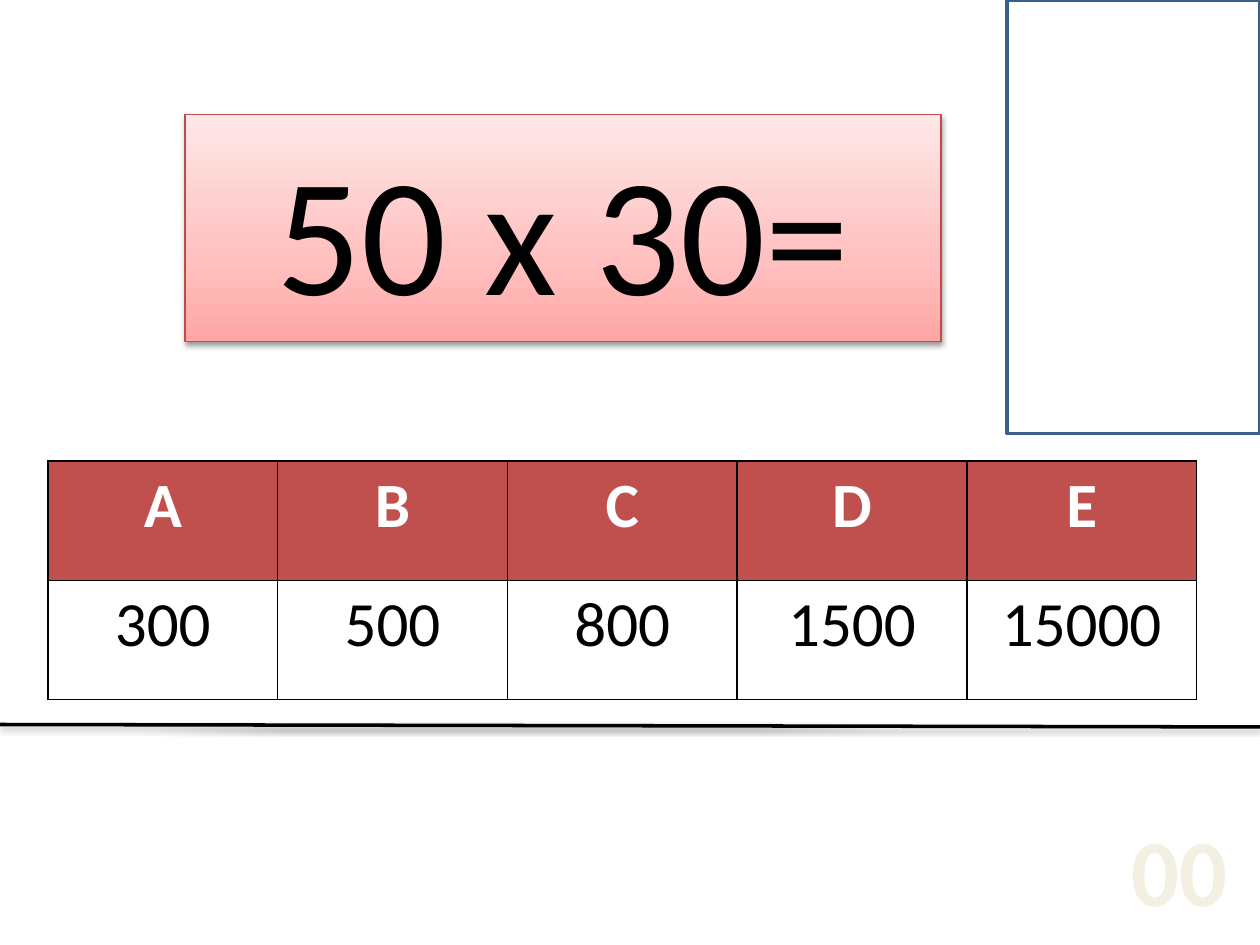
import pptx
import pptx.dml.color
import pptx.enum.shapes
import pptx.enum.text
import pptx.oxml
import pptx.oxml.ns
import pptx.util

Pt = pptx.util.Pt
FONT = "Calibri"
QUESTION = "50 x 30="
ANSWERS = [("A", "300"), ("B", "500"), ("C", "800"), ("D", "1500"), ("E", "15000")]
COUNTER = "00"
QUESTION_GRADIENT = [(0, "FFA6A5"), (35, "FFC0BF"), (100, "FFE7E7")]

PAGE_WIDTH, PAGE_HEIGHT = 720, 540
TABLE_LEFT, TABLE_TOP = 27.4, 263.5
COLUMN_WIDTH, ROW_HEIGHT = 131.3, 68.1


def color(value):
    return pptx.dml.color.RGBColor.from_string(value)


def element(xml):
    """Parse one drawing element, adding the namespace to its tag."""
    tag = xml[1:].split(">")[0].split(" ")[0].rstrip("/")
    namespace = pptx.oxml.ns.nsdecls("a")
    return pptx.oxml.parse_xml(xml.replace(tag, f"{tag} {namespace}", 1))


def set_line(shape, value, width):
    shape.line.color.rgb = color(value)
    shape.line.width = Pt(width)


def add_shadow(shape):
    """Add a soft shadow straight below; the line must be set first."""
    shape._element.spPr.append(element(
        f'<a:effectLst><a:outerShdw blurRad="{Pt(3.1)}" dist="{Pt(1.6)}" dir="5400000" '
        'rotWithShape="0"><a:srgbClr val="000000"><a:alpha val="38000"/></a:srgbClr>'
        "</a:outerShdw></a:effectLst>"))


def write(frame, text, size, value, bold=False):
    para = frame.paragraphs[0]
    para.alignment = pptx.enum.text.PP_ALIGN.CENTER
    span = para.add_run()
    span.text = text
    span.font.name = FONT
    span.font.size = Pt(size)
    span.font.bold = bold
    span.font.color.rgb = color(value)


def add_rectangle(page, left, top, width, height):
    return page.shapes.add_shape(pptx.enum.shapes.MSO_SHAPE.RECTANGLE,
                                 Pt(left), Pt(top), Pt(width), Pt(height))


def add_question(page):
    box = add_rectangle(page, 105.8, 65.4, 432, 129.8)
    set_line(box, "BF4C48", 0.75)
    stops = "".join(f'<a:gs pos="{position * 1000}"><a:srgbClr val="{value}"/></a:gs>'
                    for position, value in QUESTION_GRADIENT)
    gradient = element(f'<a:gradFill rotWithShape="1"><a:gsLst>{stops}</a:gsLst>'
                       '<a:lin ang="16200000" scaled="0"/></a:gradFill>')
    box.line._get_or_add_ln().addprevious(gradient)
    add_shadow(box)
    box.text_frame.word_wrap = True
    box.text_frame.vertical_anchor = pptx.enum.text.MSO_ANCHOR.MIDDLE
    write(box.text_frame, QUESTION, 96, "000000")


def add_borders(cell):
    properties = cell._tc.get_or_add_tcPr()
    for index, side in enumerate(("lnL", "lnR", "lnT", "lnB")):
        properties.insert(index, element(
            f'<a:{side} w="{Pt(1)}"><a:solidFill><a:srgbClr val="000000"/></a:solidFill>'
            f"</a:{side}>"))


def add_answers(page):
    rows = list(zip(*ANSWERS))
    table = page.shapes.add_table(
        len(rows), len(ANSWERS), Pt(TABLE_LEFT), Pt(TABLE_TOP),
        Pt(COLUMN_WIDTH * len(ANSWERS)), Pt(ROW_HEIGHT * len(rows))).table
    for column in table.columns:
        column.width = Pt(COLUMN_WIDTH)
    for row_index, row in enumerate(rows):
        table.rows[row_index].height = Pt(ROW_HEIGHT)
        header = row_index == 0
        for column_index, text in enumerate(row):
            cell = table.cell(row_index, column_index)
            cell.fill.solid()
            cell.fill.fore_color.rgb = color("C0504D" if header else "FFFFFF")
            add_borders(cell)
            write(cell.text_frame, text, 36, "FFFFFF" if header else "000000", header)


def add_frame(page):
    frame = add_rectangle(page, 575.3, 0, 144.7, 247.7)
    frame.fill.background()
    set_line(frame, "3A5F8C", 2)
    frame.shadow.inherit = False


def add_divider(page):
    divider = page.shapes.add_connector(pptx.enum.shapes.MSO_CONNECTOR.STRAIGHT,
                                        0, Pt(414), Pt(PAGE_WIDTH), Pt(415.4))
    set_line(divider, "000000", 2)
    add_shadow(divider)


def add_counter(page):
    box = page.shapes.add_textbox(Pt(634), Pt(460.4), Pt(80), Pt(73))
    box.text_frame.word_wrap = True
    write(box.text_frame, COUNTER, 54, "F3EFE1", True)


def main():
    deck = pptx.Presentation()
    deck.slide_width, deck.slide_height = Pt(PAGE_WIDTH), Pt(PAGE_HEIGHT)
    page = deck.slides.add_slide(deck.slide_layouts[6])
    add_question(page)
    add_answers(page)
    add_frame(page)
    add_divider(page)
    add_counter(page)
    deck.save("out.pptx")


if __name__ == "__main__":
    main()
